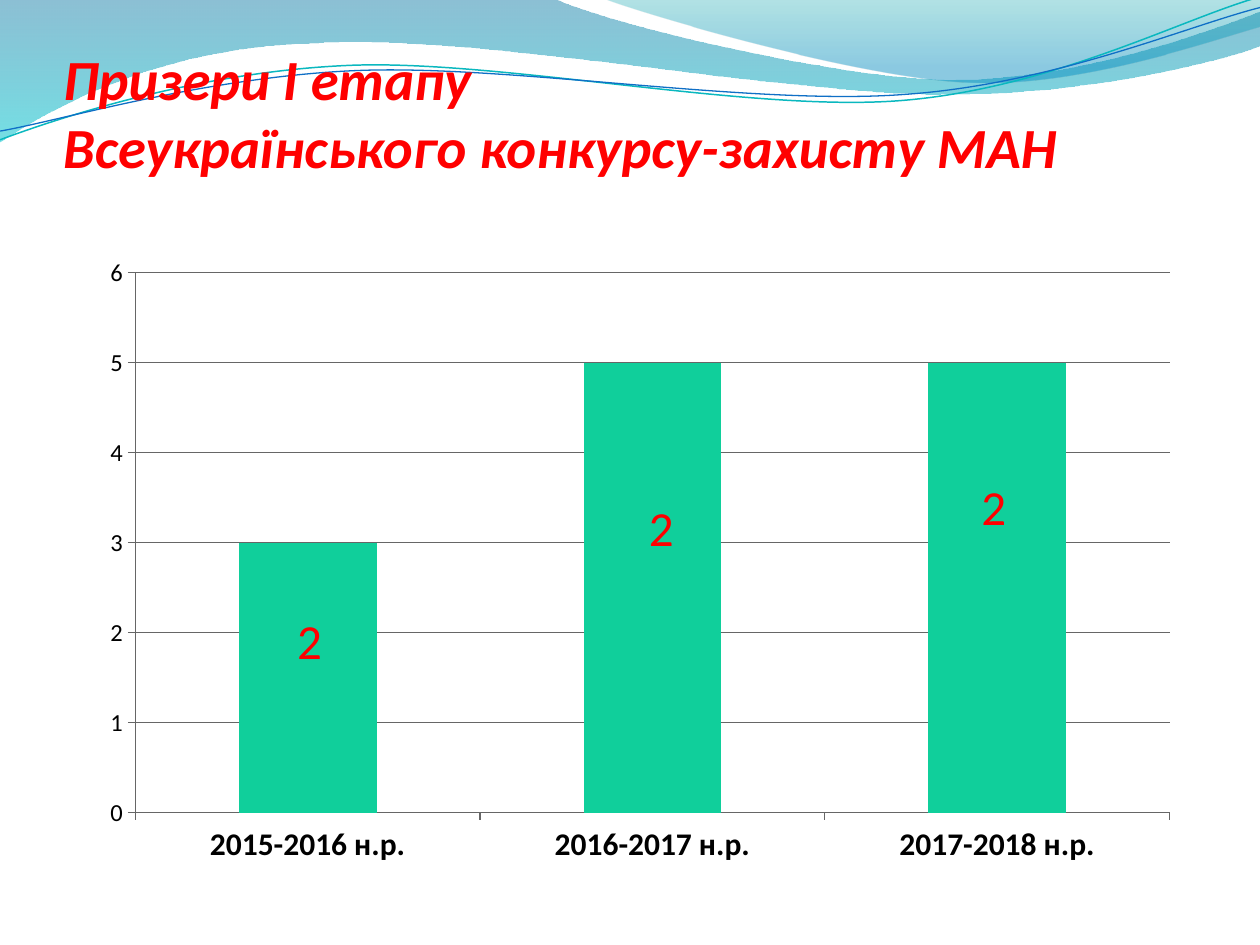
"""Slide with a wave header and a column chart of contest prize winners."""
from lxml.etree import SubElement
from pptx import Presentation
from pptx.chart.data import CategoryChartData
from pptx.dml.color import RGBColor
from pptx.enum.chart import XL_CHART_TYPE as ChartType, XL_LABEL_POSITION as LabelPos, XL_TICK_MARK as Tick
from pptx.enum.text import MSO_ANCHOR as Anchor, MSO_AUTO_SIZE as AutoSize, PP_ALIGN as Align
from pptx.oxml import parse_xml
from pptx.oxml.ns import nsdecls, qn
from pptx.util import Pt

LAYOUT = '<c:layout %s><c:manualLayout>%s</c:manualLayout></c:layout>'
CHART_WIDTH, CHART_HEIGHT = 630, 360


def color(value):
    return RGBColor.from_string(value)


def draw_wave(shapes, start, segments, close):
    builder = shapes.build_freeform(Pt(start[0]), Pt(start[1]), scale=1.0)
    builder.add_line_segments([(Pt(s[-2]), Pt(s[-1])) for s in segments], close=close)
    wave = builder.convert_to_shape()
    wave.shadow.inherit = False
    for edge, segment in zip(list(wave.element.spPr.iter(qn("a:lnTo"))), segments):
        if len(segment) == 6:
            curve = edge.makeelement(qn("a:cubicBezTo"))
            for x, y in zip(segment[::2], segment[1::2]):
                point = SubElement(curve, qn("a:pt"))
                point.set("x", str(Pt(x) - wave.left))
                point.set("y", str(Pt(y) - wave.top))
            edge.getparent().replace(edge, curve)
    return wave


prs = Presentation()
prs.slide_width, prs.slide_height = Pt(720), Pt(540)
slide = prs.slides.add_slide(prs.slide_layouts[5])
shapes = slide.shapes

bands = [
    ((0, 0), [(316.8, -0.7), (342.7, 12.2, 478.1, 45.4, 545.8, 45.4),
              (614.2, 45.4, 689.8, 18.7, 720, 6.5), (720.7, 25.9),
              (707.8, 31.7, 626.4, 54.7, 537.1, 54), (447.8, 54, 275, 20.2, 185, 24.5),
              (92.9, 25.9, 33.1, 59.8, -0.7, 81.4)],
     [(0, "0074A1", 45), (1, "00C6CF", 55)]),
    ((344.9, -0.7), [(366.5, 7.9, 491, 44.6, 553.7, 46.8),
                     (616.3, 49.7, 691.9, 23, 720, 15.1), (720, 0)],
     [(0, "00A1A9", 30), (0.8, "008BBF", 45)]),
]
for start, segments, stops in bands:
    band = draw_wave(shapes, start, segments, True)
    band.line.fill.background()
    band.fill.gradient()
    band.fill.gradient_angle = 270
    for stop, (position, shade, opacity) in zip(band.fill.gradient_stops, stops):
        stop.position = position
        stop.color.rgb = color(shade)
    for tint, (position, shade, opacity) in zip(band.element.spPr.iter(qn("a:srgbClr")), stops):
        SubElement(tint, qn("a:alpha")).set("val", str(opacity * 1000))

strands = [
    ((0, 79.9), [(34.6, 67, 113.8, 41, 199.4, 37.4), (284.4, 33.8, 427, 64.1, 513.4, 57.6),
                 (599.8, 51.1, 675.4, 10.8, 718.6, -1.4)], "0AB8BF", 0.85),
    ((0, 74.9), [(33.8, 69.1, 118.1, 43.9, 203.8, 40.3), (290.2, 36.7, 429.8, 60.5, 516.2, 54),
                 (601.9, 48.2, 677.5, 15.1, 720, 4.3)], "0F6FC6", 0.75),
]
for start, segments, shade, width in strands:
    strand = draw_wave(shapes, start, segments, False)
    strand.fill.background()
    strand.line.color.rgb = color(shade)
    strand.line.width = Pt(width)

title = shapes.title
shapes.element.append(title.element)
title.left, title.top, title.width, title.height = Pt(36), Pt(39.6), Pt(648), Pt(117.4)
heading = title.text_frame
heading.auto_size = AutoSize.NONE
heading.word_wrap = True
heading.vertical_anchor = Anchor.TOP
heading.margin_left = heading.margin_right = heading.margin_bottom = 0
heading.margin_top = Pt(-14.4)
heading_line = heading.paragraphs[0]
heading_line.alignment = Align.LEFT
for index, words in enumerate(["Призери І етапу", "Всеукраїнського конкурсу-захисту МАН"]):
    if index:
        heading_line.add_line_break()
    run = heading_line.add_run()
    run.text = words
    run.font.name, run.font.size = "Calibri", Pt(32.4)
    run.font.bold = run.font.italic = True
    run.font.color.rgb = color("FF0000")

winners = CategoryChartData()
winners.categories = ["2015-2016 н.р.", "2016-2017 н.р.", "2017-2018 н.р."]
winners.add_series("Series 1", (3, 5, 5))
chart = shapes.add_chart(ChartType.COLUMN_CLUSTERED, Pt(50.4), Pt(140.4),
                         Pt(CHART_WIDTH), Pt(CHART_HEIGHT), winners).chart
chart.has_legend = chart.has_title = False
chart.font.name, chart.font.size = "Calibri", Pt(10)
chart.font.color.rgb = color("000000")

years, counts = chart.category_axis, chart.value_axis
years.tick_labels.font.size, years.tick_labels.font.bold = Pt(18), True
counts.tick_labels.font.size = Pt(14)
counts.minimum_scale, counts.maximum_scale, counts.major_unit = 0, 6, 1
counts.has_major_gridlines = True
for axis in (years, counts):
    axis.major_tick_mark, axis.minor_tick_mark = Tick.OUTSIDE, Tick.NONE
for rule in (years.format.line, counts.format.line, counts.major_gridlines.format.line):
    rule.color.rgb = color("666666")
    rule.width = Pt(0.75)

plot_place = ('<c:layoutTarget val="inner"/><c:xMode val="edge"/><c:yMode val="edge"/>'
              f'<c:x val="{27 / CHART_WIDTH}"/><c:y val="{15.5 / CHART_HEIGHT}"/>'
              f'<c:w val="{591 / CHART_WIDTH}"/><c:h val="{308.5 / CHART_HEIGHT}"/>')
plot_area = chart.element.find(".//" + qn("c:plotArea"))
for automatic in plot_area.findall(qn("c:layout")):
    plot_area.remove(automatic)
plot_area.insert(0, parse_xml(LAYOUT % (nsdecls("c"), plot_place)))

plot = chart.plots[0]
plot.gap_width = 150
plot.vary_by_categories = False
columns = plot.series[0]
columns.format.fill.solid()
columns.format.fill.fore_color.rgb = color("10CF9B")
labels = columns.data_labels
labels.show_value = True
labels.font.size, labels.font.bold = Pt(28), True
labels.font.color.rgb = color("FF0000")
label_shifts = [(1, -20), (5, -33), (-2, -45)]
for index in range(len(label_shifts)):
    label = columns.points[index].data_label
    run = label.text_frame.paragraphs[0].add_run()
    run.text = "2"
    run.font.name, run.font.size, run.font.bold = "Calibri", Pt(28), False
    run.font.color.rgb = color("FF0000")
    label.position = LabelPos.CENTER
for entry, (right, down) in zip(chart.element.iter(qn("c:dLbl")), label_shifts):
    offset = f'<c:x val="{right / CHART_WIDTH}"/><c:y val="{down / CHART_HEIGHT}"/>'
    entry.insert(1, parse_xml(LAYOUT % (nsdecls("c"), offset)))
for leader in chart.element.iter(qn("c:showLeaderLines")):
    leader.set("val", "0")

prs.save("out.pptx")
